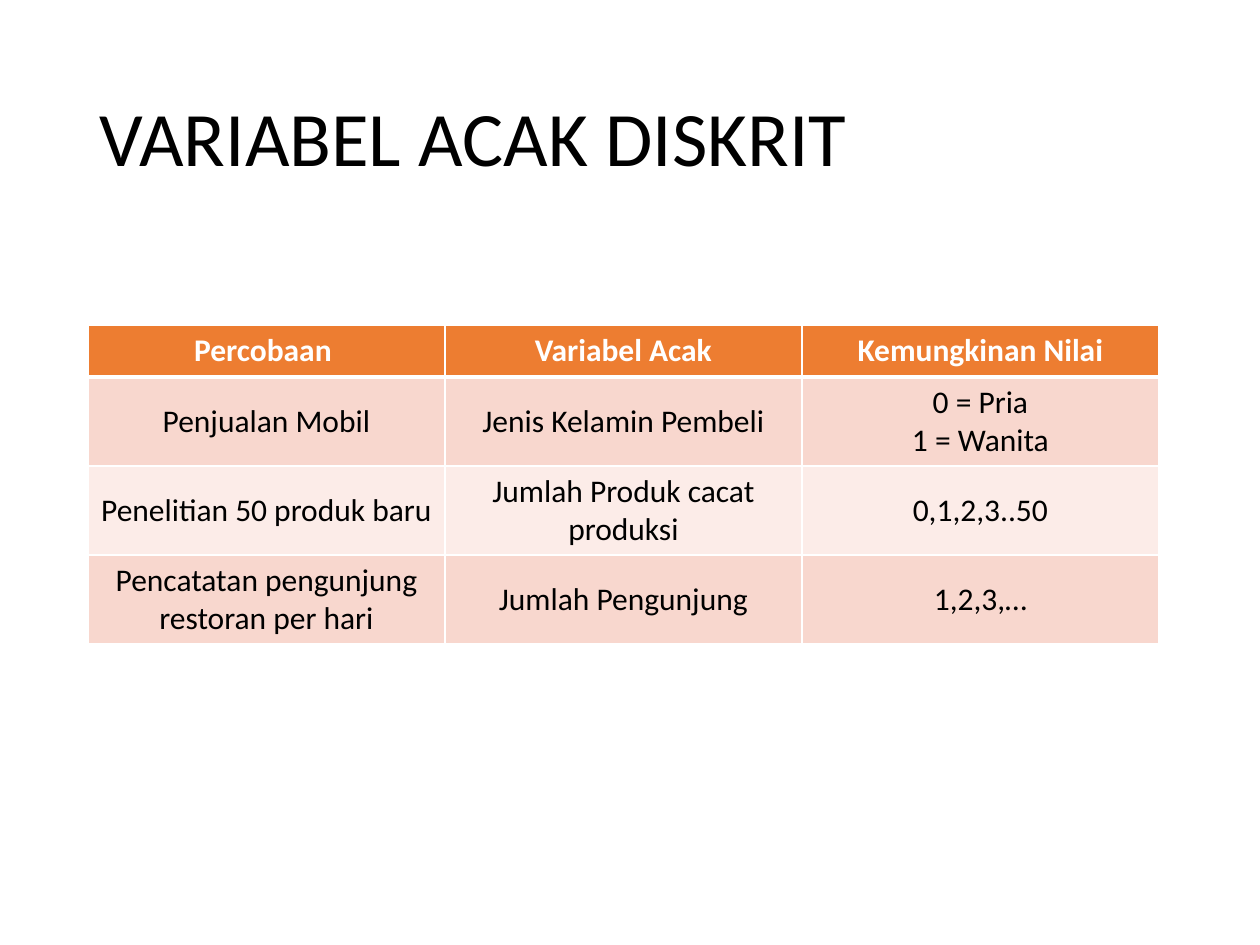
from dataclasses import dataclass

from lxml import etree
from pptx import Presentation
from pptx.dml.color import RGBColor
from pptx.enum.text import MSO_ANCHOR, PP_ALIGN
from pptx.oxml.ns import qn
from pptx.util import Pt

MIDDLE = MSO_ANCHOR.MIDDLE
CENTER = PP_ALIGN.CENTER
EMU_PER_PX = 914400 // 126
FONT = "Calibri"
WHITE, BLACK = "FFFFFF", "000000"
ORANGE, ROSE, PALE_ROSE = "ED7D31", "F8D7CE", "FCECE8"
COLUMN_WIDTH = 357
THIN, THICK = 1, 3


@dataclass(frozen=True)
class TableRow:
    texts: tuple[str, ...]
    fill: str
    height: int = 89
    color: str = BLACK
    bold: bool = False
    top: int = THIN
    bottom: int = THIN


ROWS = (
    TableRow(("Percobaan ", "Variabel Acak", "Kemungkinan Nilai"), ORANGE,
             height=52, color=WHITE, bold=True, bottom=THICK),
    TableRow(("Penjualan Mobil", "Jenis Kelamin Pembeli", "0 = Pria\n1 = Wanita"),
             ROSE, top=THICK),
    TableRow(("Penelitian 50 produk baru", "Jumlah Produk cacat produksi", "0,1,2,3..50"),
             PALE_ROSE),
    TableRow(("Pencatatan pengunjung restoran per hari", "Jumlah Pengunjung", "1,2,3,…"),
             ROSE),
)


def px(length: int) -> int:
    return length * EMU_PER_PX


def rgb(color: str) -> RGBColor:
    return RGBColor.from_string(color)


def set_font(paragraph, size: int, color: str, bold: bool = False) -> None:
    font = paragraph.font
    font.name = FONT
    font.size = Pt(size)
    font.bold = bold
    font.color.rgb = rgb(color)


def add_borders(cell, top: int, bottom: int) -> None:
    """Draw white cell edges; call before filling, as the schema puts lines first."""
    properties = cell._tc.get_or_add_tcPr()
    for side, width in (("L", THIN), ("R", THIN), ("T", top), ("B", bottom)):
        line = etree.SubElement(properties, qn(f"a:ln{side}"), w=str(Pt(width)))
        solid = etree.SubElement(line, qn("a:solidFill"))
        etree.SubElement(solid, qn("a:srgbClr"), val=WHITE)


def fill_row(cells, row: TableRow) -> None:
    for cell, text in zip(cells, row.texts):
        add_borders(cell, row.top, row.bottom)
        cell.fill.solid()
        cell.fill.fore_color.rgb = rgb(row.fill)
        cell.vertical_anchor = MIDDLE
        cell.text = text
        for paragraph in cell.text_frame.paragraphs:
            paragraph.alignment = CENTER
            set_font(paragraph, 18, row.color, row.bold)


def add_title(slide, text: str) -> None:
    frame = slide.shapes.add_textbox(px(87), px(50), px(1086), px(183)).text_frame
    frame.word_wrap = True
    frame.vertical_anchor = MIDDLE
    frame.text = text
    title = frame.paragraphs[0]
    title.line_spacing = 0.9
    set_font(title, 44, BLACK)


def add_variable_table(slide, rows: tuple[TableRow, ...]) -> None:
    column_count = len(rows[0].texts)
    table = slide.shapes.add_table(
        len(rows), column_count, px(88), px(325),
        px(COLUMN_WIDTH * column_count), px(sum(row.height for row in rows))).table
    for column in table.columns:
        column.width = px(COLUMN_WIDTH)
    for table_row, row in zip(table.rows, rows):
        table_row.height = px(row.height)
        fill_row(table_row.cells, row)


def main() -> None:
    presentation = Presentation()
    presentation.slide_width = px(1260)
    presentation.slide_height = px(945)
    slide = presentation.slides.add_slide(presentation.slide_layouts[6])
    add_title(slide, "VARIABEL ACAK DISKRIT")
    add_variable_table(slide, ROWS)
    presentation.save("out.pptx")


if __name__ == "__main__":
    main()
